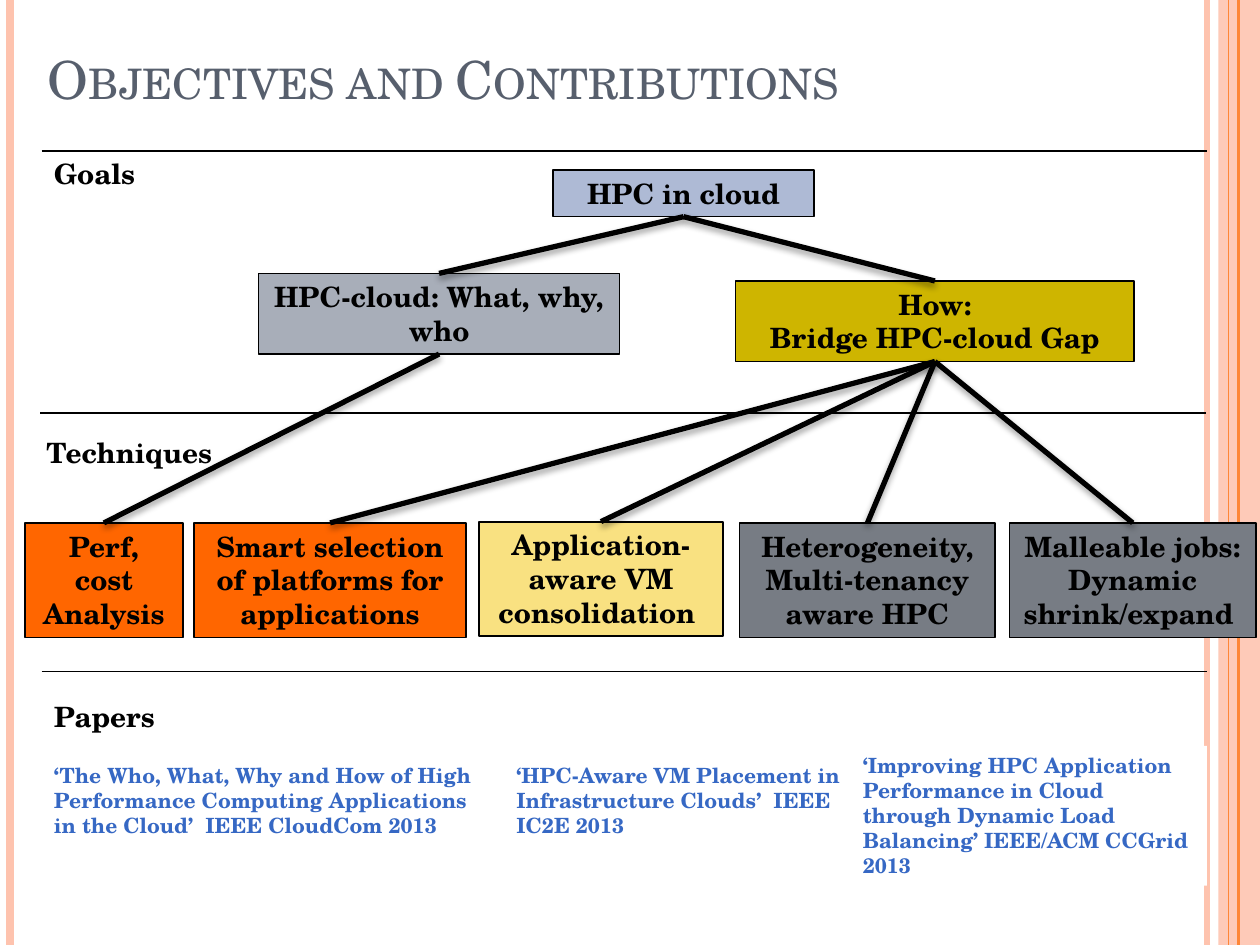
"""Build a slide that links goals, techniques and papers in a tree."""
from dataclasses import dataclass

import pptx
import pptx.dml.color
import pptx.enum.shapes
import pptx.enum.text
import pptx.oxml
import pptx.oxml.ns
import pptx.util
from pptx.util import Inches


@dataclass(frozen=True)
class Theme:
    font: str = "TeX Gyre Schola"
    title: str = "575F6D"
    ink: str = "000000"
    paper: str = "3668C4"
    white: str = "FFFFFF"
    rail: str = "FEC3AE"
    accent: str = "FE8637"
    root: str = "AEBAD5"
    study: str = "A8AEB9"
    bridge: str = "CEB500"
    orange: str = "FF6600"
    yellow: str = "F9E181"
    gray: str = "777C84"
    title_size: int = 30
    label_size: int = 16
    paper_size: int = 12


theme = Theme()
align = pptx.enum.text.PP_ALIGN
anchors = pptx.enum.text.MSO_ANCHOR
rgb = pptx.dml.color.RGBColor.from_string
namespace = pptx.oxml.ns.nsdecls("a")
shadow_xml = (
    f'<a:effectLst {namespace}><a:outerShdw blurRad="50800" dist="25400" dir="5400000" '
    f'rotWithShape="0"><a:srgbClr val="{theme.ink}"><a:alpha val="40000"/></a:srgbClr>'
    "</a:outerShdw></a:effectLst>"
)
plain_xml = f"<a:effectLst {namespace}/>"


def add_block(text, left, top, width, height, size, color, fill=None, line=0, alignment=align.LEFT):
    box = slide.shapes.add_shape(
        pptx.enum.shapes.MSO_SHAPE.RECTANGLE, Inches(left), Inches(top), Inches(width), Inches(height)
    ) if fill else slide.shapes.add_textbox(Inches(left), Inches(top), Inches(width), Inches(height))
    if fill:
        box.shadow.inherit = False
        box.fill.solid()
        box.fill.fore_color.rgb = rgb(fill)
        if line:
            box.line.color.rgb = rgb(theme.ink)
            box.line.width = pptx.util.Pt(line)
        else:
            box.line.fill.background()
    frame = box.text_frame
    frame.text = text
    frame.word_wrap = True
    frame.vertical_anchor = anchors.TOP
    for para in frame.paragraphs:
        para.alignment = alignment
        for span in para.runs:
            span.font.name = theme.font
            span.font.size = pptx.util.Pt(size)
            span.font.bold = True
            span.font.color.rgb = rgb(color)
    return box


def add_line(start, end, width, color=theme.ink, effect=shadow_xml):
    connector = slide.shapes.add_connector(
        pptx.enum.shapes.MSO_CONNECTOR.STRAIGHT, *(Inches(value) for value in (*start, *end))
    )
    connector.line.color.rgb = rgb(color)
    connector.line.width = pptx.util.Pt(width)
    connector._element.spPr.append(pptx.oxml.parse_xml(effect))
    return connector


deck = pptx.Presentation()
deck.slide_width, deck.slide_height = Inches(10), Inches(7.5)
slide = deck.slides.add_slide(deck.slide_layouts[5])

title = slide.shapes.title
title.left, title.top, title.width, title.height = Inches(0.28), Inches(-0.08), Inches(8.8), Inches(1)
title.text_frame.text = "Objectives and Contributions"
title.text_frame.vertical_anchor = anchors.BOTTOM
title.text_frame.paragraphs[0].alignment = align.LEFT
span = title.text_frame.paragraphs[0].runs[0]
span.font.name = theme.font
span.font.size = pptx.util.Pt(theme.title_size)
span.font.color.rgb = rgb(theme.title)
span.font._element.set("cap", "small")

band = add_block("", 9.67, 0, 0.33, 7.5, theme.label_size, theme.ink, theme.rail)
band_color = band._element.spPr.find(".//" + pptx.oxml.ns.qn("a:srgbClr"))
band_color.append(pptx.oxml.parse_xml(f'<a:alpha {namespace} val="87000"/>'))
rails = [
    (0.08, 4.5, theme.rail),
    (9.58, 3, theme.rail),
    (9.75, 0.75, theme.accent),
    (9.83, 1.5, theme.accent),
]
for x, width, color in rails:
    add_line((x, 0), (x, 7.5), width, color, plain_xml)

for left, y in [(0.33, 1.2), (0.32, 3.28), (0.33, 5.33)]:
    add_line((left, y), (left + 9.25, y), 1)

for text, left, top in [("Goals", 0.33, 1.19), ("Techniques", 0.27, 3.41), ("Papers", 0.33, 5.5)]:
    add_block(text, left, top, 1.65, 0.37, theme.label_size, theme.ink)

nodes = {
    "root": ("HPC in cloud", 4.39, 1.35, 2.07, 0.37, theme.root, 0.75),
    "study": ("HPC-cloud: What, why, who", 2.05, 2.17, 2.87, 0.64, theme.study, 0.75),
    "bridge": ("How:\nBridge HPC-cloud Gap", 5.84, 2.23, 3.16, 0.64, theme.bridge, 0.75),
    "analysis": ("Perf, cost Analysis", 0.2, 4.15, 1.25, 0.91, theme.orange, 1),
    "selection": ("Smart selection of platforms for applications", 1.54, 4.15, 2.16, 0.91, theme.orange, 1),
    "consolidation": ("Application-aware VM consolidation ", 3.8, 4.14, 1.94, 0.91, theme.yellow, 1),
    "tenancy": ("Heterogeneity, Multi-tenancy aware HPC", 5.87, 4.15, 2.03, 0.91, theme.gray, 1),
    "malleable": ("Malleable jobs: Dynamic shrink/expand ", 8.01, 4.15, 1.96, 0.91, theme.gray, 0.75),
}
boxes = {}
for name, (text, left, top, width, height, fill, line) in nodes.items():
    boxes[name] = add_block(
        text, left, top, width, height, theme.label_size, theme.ink, fill, line, align.CENTER
    )

branches = {
    "root": ["study", "bridge"],
    "study": ["analysis"],
    "bridge": ["selection", "consolidation", "tenancy", "malleable"],
}
for parent, children in branches.items():
    for child in children:
        branch = add_line((0, 0), (1, 1), 3)
        branch.begin_connect(boxes[parent], 2)
        branch.end_connect(boxes[child], 0)

papers = [
    ("‘The Who, What, Why and How of High Performance Computing Applications in the Cloud’  "
     "IEEE CloudCom 2013", 0.33, 6, 3.58, 0.71, None),
    ("‘HPC-Aware VM Placement in Infrastructure Clouds’  IEEE IC2E 2013", 4, 6, 3, 0.71, None),
    ("‘Improving HPC Application Performance in Cloud through Dynamic Load Balancing’ "
     "IEEE/ACM CCGrid 2013", 6.75, 5.92, 2.83, 1.11, theme.white),
]
for text, left, top, width, height, fill in papers:
    add_block(text, left, top, width, height, theme.paper_size, theme.paper, fill)

deck.save("out.pptx")
